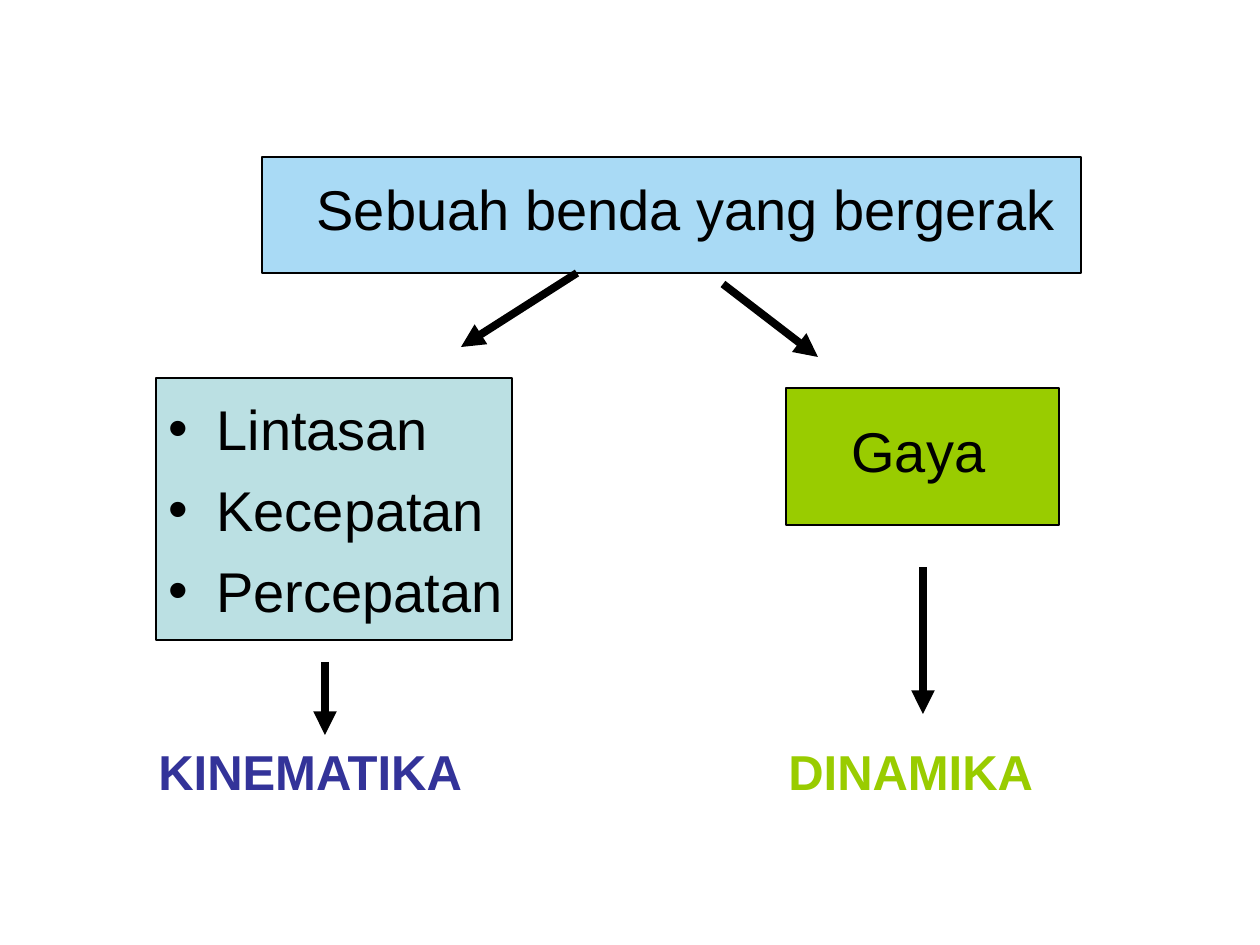
import pptx
import pptx.util
import pptx.dml.color
import pptx.enum.shapes
import pptx.enum.text
import pptx.oxml.ns
import lxml.etree

PX = 914400 / 126
COLORS = {"black": "000000", "sky": "A9DAF5", "teal": "BBE0E3",
          "green": "99CC00", "navy": "333399"}

# Places are left, top, width, height in px
HEAD = ("Sebuah benda yang bergerak", (273, 168, 829, 84))
BOXES = [
    ("sky", (262, 157, 819, 116)),
    ("teal", (156, 378, 356, 262)),
    ("green", (786, 388, 273, 137)),
]
# lines, place, size, color, bold, bullet
TEXTS = [
    (["Lintasan", "Kecepatan", "Percepatan"], (156, 388, 400, 252),
     32, "black", False, "•"),
    (["Gaya"], (839, 410, 388, 84), 32, "black", False, None),
    (["KINEMATIKA"], (146, 735, 378, 84), 28, "navy", True, None),
    (["DINAMIKA"], (776, 735, 378, 84), 28, "green", True, None),
]
# from x, from y, to x, to y
ARROWS = [
    (577, 273, 461, 347),
    (723, 284, 818, 357),
    (325, 662, 325, 735),
    (923, 567, 923, 714),
]


def emu(place):
    return [round(n * PX) for n in place]


def rgb(name):
    return pptx.dml.color.RGBColor.from_string(COLORS[name])


def add_sub(parent, tag, **attrs):
    return lxml.etree.SubElement(parent, pptx.oxml.ns.qn(tag), **attrs)


def write(frame, lines, size, color, bold=False, bullet=None, indent=0):
    """Fill a text frame; indent is in px and hangs the bullet if there is one."""
    frame.word_wrap = True
    frame.auto_size = pptx.enum.text.MSO_AUTO_SIZE.NONE
    frame.vertical_anchor = pptx.enum.text.MSO_ANCHOR.TOP
    for i, line in enumerate(lines):
        par = frame.add_paragraph() if i else frame.paragraphs[0]
        par.text = line
        par.space_before = pptx.util.Pt(size / 4)
        par.font.name = "Arial"
        par.font.size = pptx.util.Pt(size)
        par.font.bold = bold
        par.font.color.rgb = rgb(color)
        props = par._p.get_or_add_pPr()
        left = round(indent * PX)
        props.set("marL", str(left))
        props.set("indent", str(-left if bullet else 0))
        if bullet:
            add_sub(props, "a:buFont", typeface="Arial")
            add_sub(props, "a:buChar", char=bullet)
        else:
            add_sub(props, "a:buNone")


def add_box(slide, color, place):
    box = slide.shapes.add_shape(
        pptx.enum.shapes.MSO_SHAPE.RECTANGLE, *emu(place))
    box.shadow.inherit = False
    box.fill.solid()
    box.fill.fore_color.rgb = rgb(color)
    box.line.color.rgb = rgb("black")
    box.line.width = pptx.util.Pt(0.75)


def add_arrow(slide, ends):
    arrow = slide.shapes.add_connector(
        pptx.enum.shapes.MSO_CONNECTOR.STRAIGHT, *emu(ends))
    arrow.line.color.rgb = rgb("black")
    arrow.line.width = pptx.util.Pt(4.5)
    add_sub(arrow.line._get_or_add_ln(), "a:tailEnd", type="triangle")
    add_sub(arrow._element.spPr, "a:effectLst")


def main():
    deck = pptx.Presentation()
    deck.slide_width, deck.slide_height = emu((1260, 945))
    slide = deck.slides.add_slide(deck.slide_layouts[1])
    title = slide.shapes.title._element
    title.getparent().remove(title)

    for color, place in BOXES:
        add_box(slide, color, place)

    line, place = HEAD
    body = slide.placeholders[1]
    body.left, body.top, body.width, body.height = emu(place)
    write(body.text_frame, [line], 32, "black", indent=31)
    tree = slide.shapes._spTree
    tree.append(body._element)  # in front of the boxes

    for lines, place, size, color, bold, bullet in TEXTS:
        area = slide.shapes.add_textbox(*emu(place))
        write(area.text_frame, lines, size, color, bold, bullet,
              indent=48 if bullet else 0)

    for ends in ARROWS:
        add_arrow(slide, ends)
    deck.save("out.pptx")


if __name__ == "__main__":
    main()
